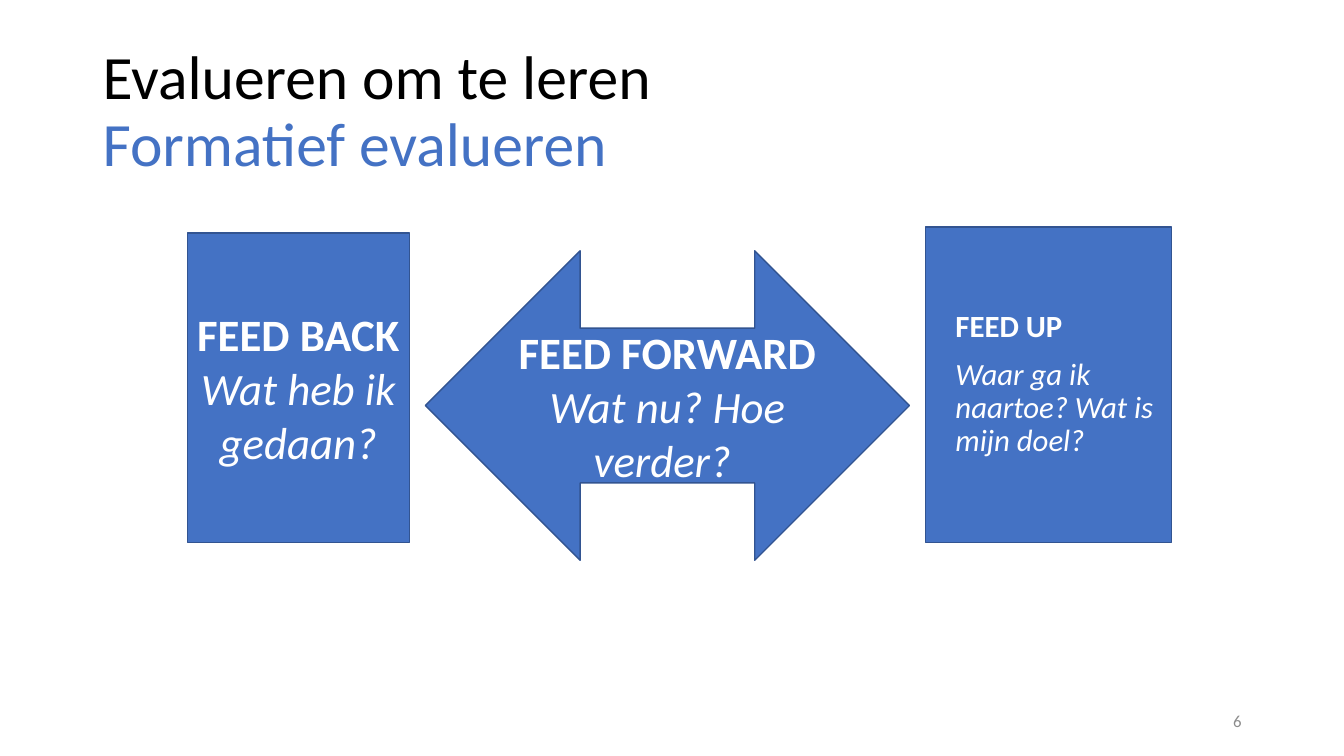
from pptx import Presentation
from pptx.dml.color import RGBColor
from pptx.enum.shapes import MSO_SHAPE
from pptx.enum.text import MSO_ANCHOR, PP_ALIGN
from pptx.util import Cm, Pt

BLUE = RGBColor(0x44, 0x72, 0xC4)
EDGE = RGBColor(0x32, 0x54, 0x91)
WHITE = RGBColor(255, 255, 255)
BLACK = RGBColor(0, 0, 0)
GREY = RGBColor(0x8C, 0x8C, 0x8C)

TITLE = [("Evalueren om te leren", BLACK), ("Formatief evalueren", BLUE)]
NUMBER = "6"
MID = dict(size=32, align=PP_ALIGN.CENTER)
SIDE = dict(size=22, align=PP_ALIGN.LEFT, lines=0.9, before=10, indent=0.51)
STEPS = [
    (MSO_SHAPE.LEFT_RIGHT_ARROW, (10.72, 6.32, 12.2, 7.8),
     "FEED FORWARD", "Wat nu? Hoe verder? ", MID),
    (MSO_SHAPE.RECTANGLE, (4.72, 5.87, 5.6, 7.8),
     "FEED BACK", "Wat heb ik gedaan?", MID),
    (MSO_SHAPE.RECTANGLE, (23.32, 5.72, 6.2, 7.95),
     "FEED UP", "Waar ga ik naartoe? Wat is mijn doel?", SIDE),
]


def write(par, text, size=32, color=WHITE, bold=False, italic=False,
          align=PP_ALIGN.LEFT, lines=None, before=0, indent=0):
    run = par.add_run()
    run.text = text
    font = run.font
    font.name, font.size = "Calibri", Pt(size)
    font.bold, font.italic = bold, italic
    font.color.rgb = color
    par.alignment = align
    par.space_before = Pt(before)
    if lines:
        par.line_spacing = lines
    if indent:
        props = par._p.get_or_add_pPr()
        props.set("marL", str(Cm(indent)))
        props.set("indent", "0")


def main():
    deck = Presentation()
    deck.slide_width, deck.slide_height = Cm(33.87), Cm(19.05)
    slide = deck.slides.add_slide(deck.slide_layouts[5])

    title = slide.shapes.title
    title.left, title.top = Cm(2.33), Cm(1.01)
    title.width, title.height = Cm(29.21), Cm(3.68)
    frame = title.text_frame
    frame.vertical_anchor = MSO_ANCHOR.MIDDLE
    par = frame.paragraphs[0]
    for place, (text, color) in enumerate(TITLE):
        if place:
            par.add_line_break()
        write(par, text, size=44, color=color, lines=0.9)

    for kind, box, head, body, style in STEPS:
        shape = slide.shapes.add_shape(kind, *map(Cm, box))
        shape.shadow.inherit = False
        shape.fill.solid()
        shape.fill.fore_color.rgb = BLUE
        shape.line.color.rgb = EDGE
        shape.line.width = Pt(1)
        frame = shape.text_frame
        frame.word_wrap = True
        frame.vertical_anchor = MSO_ANCHOR.MIDDLE
        write(frame.paragraphs[0], head, bold=True, **style)
        write(frame.add_paragraph(), body, italic=True, **style)

    foot = slide.shapes.add_textbox(Cm(23.92), Cm(17.66), Cm(7.62), Cm(1.01))
    frame = foot.text_frame
    frame.word_wrap = True
    frame.vertical_anchor = MSO_ANCHOR.MIDDLE
    write(frame.paragraphs[0], NUMBER, size=12, color=GREY,
          align=PP_ALIGN.RIGHT)
    deck.save("out.pptx")


if __name__ == "__main__":
    main()
